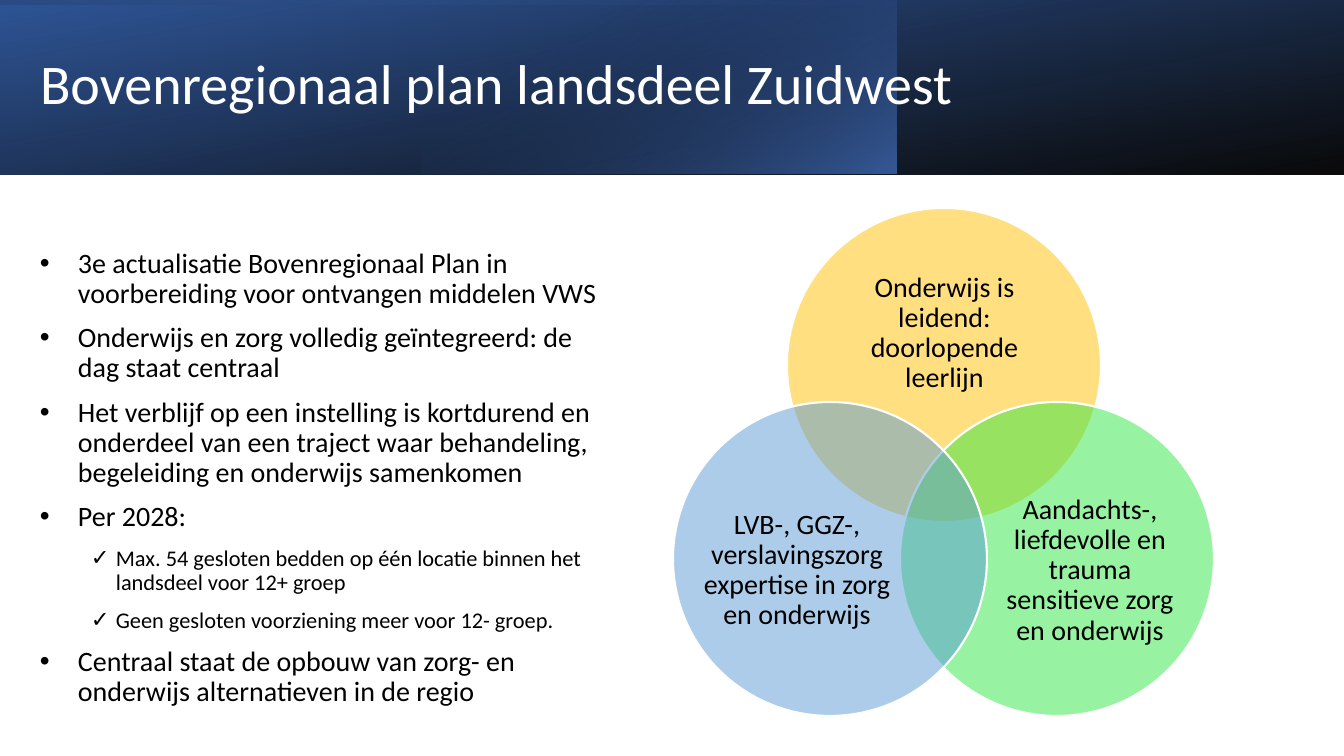
from dataclasses import dataclass

from lxml import etree
from pptx import Presentation
from pptx import util as u
from pptx.dml.color import RGBColor
from pptx.enum import shapes, text
from pptx.oxml import ns

PX = 9071.43


@dataclass(frozen=True)
class Theme:
    font: str = "Calibri"
    white: str = "FFFFFF"
    black: str = "000000"
    blue: str = "4472C4"
    deep_blue: str = "2F5597"
    navy: str = "203864"
    amber: str = "FFC000"
    green: str = "30E845"
    sky: str = "5B9BD5"
    title_size: int = 40
    body_size: int = 20
    detail_size: int = 16
    line_spacing: float = 0.9


@dataclass(frozen=True)
class Box:
    left: int
    top: int
    width: int
    height: int

    def emu(self) -> tuple:
        return tuple(px(v) for v in (self.left, self.top, self.width, self.height))


@dataclass(frozen=True)
class Stop:
    position: int
    color: str
    alpha: int


@dataclass(frozen=True)
class Band:
    box: Box
    stops: tuple
    angle: int
    rotation: int = 0
    flipped: bool = False


@dataclass(frozen=True)
class Point:
    wording: str
    detail: bool = False


@dataclass(frozen=True)
class Circle:
    left: int
    top: int
    color: str
    wording: str
    label: Box


THEME = Theme()
DIAMETER = 314

BANDS = (
    Band(Box(0, 0, 1344, 174),
         (Stop(0, THEME.black, 96), Stop(100, THEME.deep_blue, 100)), 100, 180, True),
    Band(Box(585, -585, 174, 1344),
         (Stop(19, THEME.blue, 0), Stop(99, THEME.black, 74)), 190, 270),
    Band(Box(422, 0, 475, 174),
         (Stop(0, THEME.blue, 72), Stop(74, THEME.navy, 0)), 240),
)

POINTS = (
    Point("3e actualisatie Bovenregionaal Plan in voorbereiding voor ontvangen middelen VWS"),
    Point("Onderwijs en zorg volledig geïntegreerd: de dag staat centraal"),
    Point("Het verblijf op een instelling is kortdurend en onderdeel van een traject "
          "waar behandeling, begeleiding en onderwijs samenkomen"),
    Point("Per 2028:"),
    Point("Max. 54 gesloten bedden op één locatie binnen het landsdeel voor 12+ groep", True),
    Point("Geen gesloten voorziening meer voor 12- groep.", True),
    Point("Centraal staat de opbouw van zorg- en onderwijs alternatieven in de regio"),
)

CIRCLES = (
    Circle(787, 208, THEME.amber, "Onderwijs is leidend: doorlopende leerlijn",
           Box(829, 263, 231, 141)),
    Circle(900, 402, THEME.green,
           "Aandachts-, liefdevolle en trauma sensitieve zorg en onderwijs",
           Box(996, 484, 188, 173)),
    Circle(673, 402, THEME.sky,
           "LVB-, GGZ-, verslavingszorg expertise in zorg en onderwijs",
           Box(703, 484, 188, 173)),
)


def px(value: int) -> int:
    return round(value * PX)


def style(paragraph, size: int, color: str) -> None:
    paragraph.line_spacing = THEME.line_spacing
    for run in paragraph.runs:
        run.font.name = THEME.font
        run.font.size = u.Pt(size)
        run.font.color.rgb = RGBColor.from_string(color)


def set_alpha(color_node, percent: int) -> None:
    etree.SubElement(color_node, ns.qn("a:alpha")).set("val", str(percent * 1000))


def draw_band(slide, band: Band) -> None:
    shape = slide.shapes.add_shape(shapes.MSO_SHAPE.RECTANGLE, *band.box.emu())
    shape.shadow.inherit = False
    shape.line.fill.background()
    shape.rotation = band.rotation
    if band.flipped:
        shape.element.spPr.find(ns.qn("a:xfrm")).set("flipH", "1")
    shape.fill.gradient()
    gradient = shape.element.spPr.find(ns.qn("a:gradFill"))
    gradient.set("rotWithShape", "1")
    stop_list = gradient.find(ns.qn("a:gsLst"))
    for old in list(stop_list):
        stop_list.remove(old)
    for stop in band.stops:
        node = etree.SubElement(stop_list, ns.qn("a:gs"))
        node.set("pos", str(stop.position * 1000))
        color = etree.SubElement(node, ns.qn("a:srgbClr"))
        color.set("val", stop.color)
        set_alpha(color, stop.alpha)
    gradient.find(ns.qn("a:lin")).set("ang", str(band.angle * 60000))


def draw_title(slide, wording: str, box: Box) -> None:
    title = slide.shapes.title
    title.left, title.top, title.width, title.height = box.emu()
    frame = title.text_frame
    frame.text = wording
    frame.auto_size = text.MSO_AUTO_SIZE.NONE
    frame.vertical_anchor = text.MSO_ANCHOR.MIDDLE
    frame.paragraphs[0].alignment = text.PP_ALIGN.LEFT
    style(frame.paragraphs[0], THEME.title_size, THEME.white)


def draw_points(slide, points: tuple, box: Box) -> None:
    frame = slide.shapes.add_textbox(*box.emu()).text_frame
    frame.word_wrap = True
    frame.margin_top = frame.margin_bottom = 0
    frame.text = "\n".join(point.wording for point in points)
    for paragraph, point in zip(frame.paragraphs, points):
        paragraph.level = int(point.detail)
        style(paragraph, THEME.detail_size if point.detail else THEME.body_size, THEME.black)
        paragraph.space_before = u.Pt(0)
        paragraph.space_after = u.Pt(10)
        margin, hanging, mark = (76, 25, "✓") if point.detail else (38, 38, "•")
        properties = paragraph._p.get_or_add_pPr()
        properties.set("marL", str(px(margin)))
        properties.set("indent", str(-px(hanging)))
        etree.SubElement(properties, ns.qn("a:buFont")).set("typeface", "Arial")
        etree.SubElement(properties, ns.qn("a:buChar")).set("char", mark)


def draw_circle(slide, circle: Circle) -> None:
    box = Box(circle.left, circle.top, DIAMETER, DIAMETER)
    disc = slide.shapes.add_shape(shapes.MSO_SHAPE.OVAL, *box.emu())
    disc.shadow.inherit = False
    disc.fill.solid()
    disc.fill.fore_color.rgb = RGBColor.from_string(circle.color)
    set_alpha(disc.element.spPr.find(ns.qn("a:solidFill"))[0], 50)
    disc.line.color.rgb = RGBColor.from_string(THEME.white)
    disc.line.width = u.Pt(1.5)

    frame = slide.shapes.add_textbox(*circle.label.emu()).text_frame
    frame.word_wrap = True
    frame.margin_left = frame.margin_right = frame.margin_top = frame.margin_bottom = 0
    frame.vertical_anchor = text.MSO_ANCHOR.MIDDLE
    frame.text = circle.wording
    frame.paragraphs[0].alignment = text.PP_ALIGN.CENTER
    style(frame.paragraphs[0], THEME.body_size, THEME.black)


def main() -> None:
    deck = Presentation()
    deck.slide_width, deck.slide_height = px(1344), px(756)
    slide = deck.slides.add_slide(deck.slide_layouts[5])
    for band in BANDS:
        draw_band(slide, band)
    title = slide.shapes.title.element
    title.getparent().append(title)
    draw_title(slide, "Bovenregionaal plan landsdeel Zuidwest", Box(30, 32, 1298, 108))
    draw_points(slide, POINTS, Box(30, 249, 582, 470))
    for circle in CIRCLES:
        draw_circle(slide, circle)
    deck.save("out.pptx")


if __name__ == "__main__":
    main()
